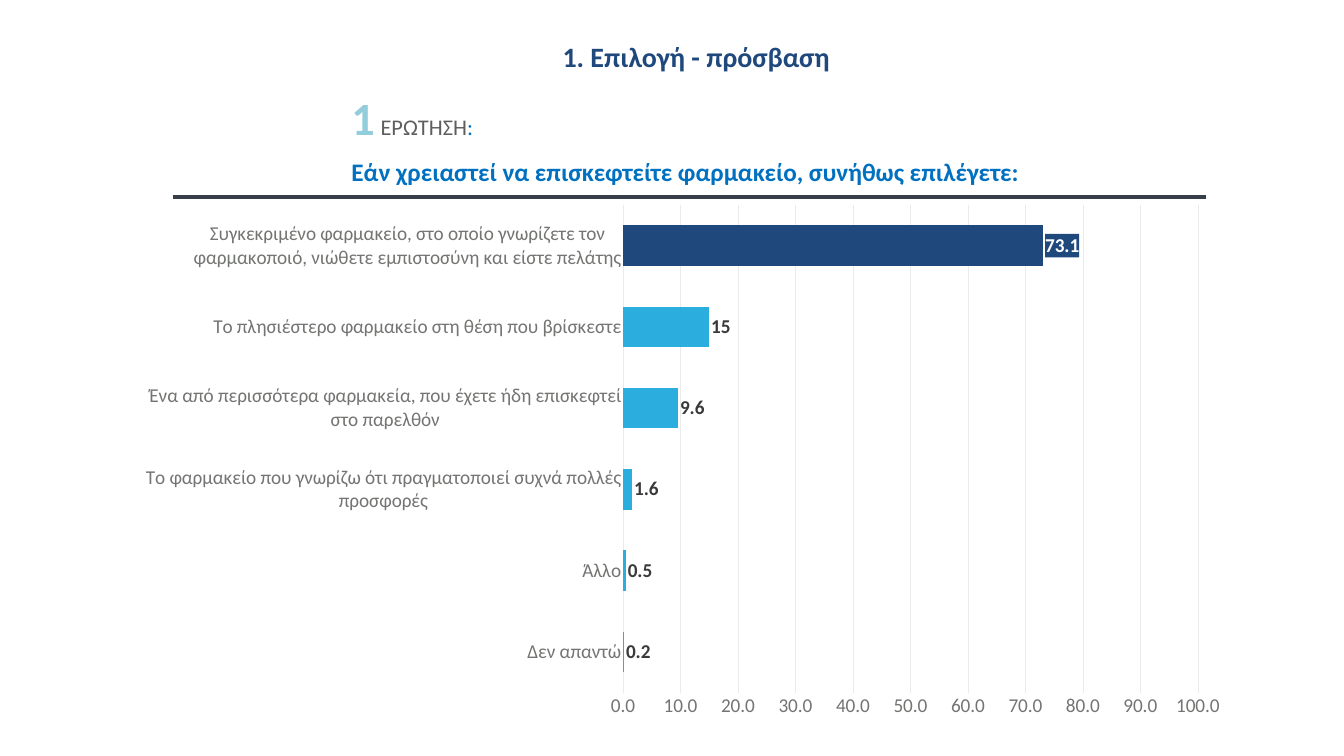
from dataclasses import dataclass

from lxml import etree
from pptx import Presentation
from pptx.chart.data import CategoryChartData
from pptx.dml.color import RGBColor
from pptx.enum.chart import XL_CHART_TYPE, XL_LABEL_POSITION, XL_TICK_MARK
from pptx.enum.shapes import MSO_CONNECTOR
from pptx.enum.text import MSO_AUTO_SIZE, PP_ALIGN
from pptx.oxml import parse_xml
from pptx.oxml.ns import nsdecls, qn
from pptx.util import Pt

BAR = XL_CHART_TYPE.BAR_CLUSTERED
OUT_END = XL_LABEL_POSITION.OUTSIDE_END
NO_TICK = XL_TICK_MARK.NONE
STRAIGHT = MSO_CONNECTOR.STRAIGHT
GROW = MSO_AUTO_SIZE.SHAPE_TO_FIT_TEXT
CENTER = PP_ALIGN.CENTER
PX = 9525  # 96 px to the inch


@dataclass(frozen=True)
class Theme:
    face: str = "Calibri"
    navy: str = "1F497D"
    sky: str = "2BAEDD"
    blue: str = "0070C0"
    pale: str = "92CDDC"
    gray: str = "5E5E5E"
    axis: str = "737572"
    grid: str = "EAEAEA"
    dark: str = "3A3A39"
    rule: str = "363E48"
    white: str = "FFFFFF"
    title: int = 40
    number: int = 66
    ask: int = 36
    tag: int = 32
    label: int = 28


T = Theme()


def style(font, size, color, bold=False):
    font.name = T.face
    font.size = Pt(size)
    font.bold = bold
    font.color.rgb = RGBColor.from_string(color)


def add_text(box, wrap, paras, align=None, after=None):
    """Add a text box; each paragraph is a list of (text, size, color, bold)."""
    frame = slide.shapes.add_textbox(*[n * PX for n in box]).text_frame
    frame.word_wrap = wrap
    frame.auto_size = GROW
    for i, runs in enumerate(paras):
        para = frame.add_paragraph() if i else frame.paragraphs[0]
        para.line_spacing = 1.15
        if align is not None:
            para.alignment = align
        if after is not None:
            para.space_after = Pt(after)
        for text, size, color, bold in runs:
            run = para.add_run()
            run.text = text
            style(run.font, size, color, bold)


prs = Presentation()
prs.slide_width = 2560 * PX
prs.slide_height = 1440 * PX
slide = prs.slides.add_slide(prs.slide_layouts[6])

# Title
add_text((1059, 60, 534, 80), False,
         [[("1. Επιλογή - πρόσβαση", T.title, T.navy, True)]], align=CENTER)

# Answers, from the bottom bar up
answers = [
    ("Δεν απαντώ", 0.2),
    ("Άλλο", 0.5),
    ("Το φαρμακείο που γνωρίζω ότι πραγματοποιεί συχνά πολλές προσφορές", 1.6),
    ("Ένα από περισσότερα φαρμακεία, που έχετε ήδη επισκεφτεί στο παρελθόν", 9.6),
    ("Το πλησιέστερο φαρμακείο στη θέση που βρίσκεστε", 15),
    ("Συγκεκριμένο φαρμακείο, στο οποίο γνωρίζετε τον φαρμακοποιό, "
     "νιώθετε εμπιστοσύνη και είστε πελάτης", 73.1),
]
data = CategoryChartData()
data.categories = [name for name, share in answers]
data.add_series("Series 1", [share for name, share in answers])
area = [n * PX for n in (254, 390, 2069, 1010)]
chart = slide.shapes.add_chart(BAR, *area, data).chart
chart.has_legend = False
chart.has_title = False
style(chart.font, 10, T.axis)

cats, vals = chart.category_axis, chart.value_axis
for axis in (cats, vals):
    axis.major_tick_mark = NO_TICK
    axis.minor_tick_mark = NO_TICK
    style(axis.tick_labels.font, T.label, T.axis)
cats.has_major_gridlines = False
vals.has_major_gridlines = True
for line in (cats.format.line, vals.major_gridlines.format.line):
    line.color.rgb = RGBColor.from_string(T.grid)
    line.width = Pt(0.75)
vals.format.line.fill.background()
vals.minimum_scale = 0
vals.maximum_scale = 100
vals.tick_labels.number_format = "0.0"
vals.tick_labels.number_format_is_linked = False

# Bars and their labels, with the top answer picked out
plot = chart.plots[0]
plot.gap_width = 100
plot.vary_by_categories = False
bars = plot.series[0]
bars.format.fill.solid()
bars.format.fill.fore_color.rgb = RGBColor.from_string(T.sky)
labels = bars.data_labels
labels.show_value = True
labels.position = OUT_END
labels.number_format = "General"
labels.number_format_is_linked = False
style(labels.font, T.label, T.dark, True)

top = bars.points[len(answers) - 1]
top.format.fill.solid()
top.format.fill.fore_color.rgb = RGBColor.from_string(T.navy)
style(top.data_label.font, T.label, T.white, True)
top.data_label.position = OUT_END
text = chart.element.xpath("//c:dLbl/c:txPr")[0]
text.addprevious(parse_xml(
    f'<c:spPr {nsdecls("c", "a")}><a:solidFill>'
    f'<a:srgbClr val="{T.navy}"/></a:solidFill></c:spPr>'))

# Fixed plot area inside the chart
pane = chart.element.xpath("//c:plotArea")[0]
for old in pane.findall(qn("c:layout")):
    pane.remove(old)
parts = [("layoutTarget", "inner"), ("xMode", "edge"), ("yMode", "edge"),
         ("x", 0.48), ("y", 0), ("w", 0.54), ("h", 0.92)]
inner = "".join(f'<c:{tag} val="{val}"/>' for tag, val in parts)
pane.insert(0, parse_xml(
    f'<c:layout {nsdecls("c")}><c:manualLayout>{inner}</c:manualLayout></c:layout>'))

# Question
add_text((660, 150, 1899, 216), True, [
    [("1", T.number, T.pale, True), (" ", T.ask, T.gray, False),
     ("ΕΡΩΤΗΣΗ", T.tag, T.gray, False), (":", T.tag, T.blue, False)],
    [("Εάν χρειαστεί να επισκεφτείτε φαρμακείο, συνήθως επιλέγετε:",
      T.ask, T.blue, True)],
], after=10)

# Rule under the question
rule = slide.shapes.add_connector(STRAIGHT, 329 * PX, 376 * PX, 2298 * PX, 376 * PX)
rule.line.color.rgb = RGBColor.from_string(T.rule)
rule.line.width = Pt(6)
etree.SubElement(rule.element.spPr, qn("a:effectLst"))

prs.save("out.pptx")
